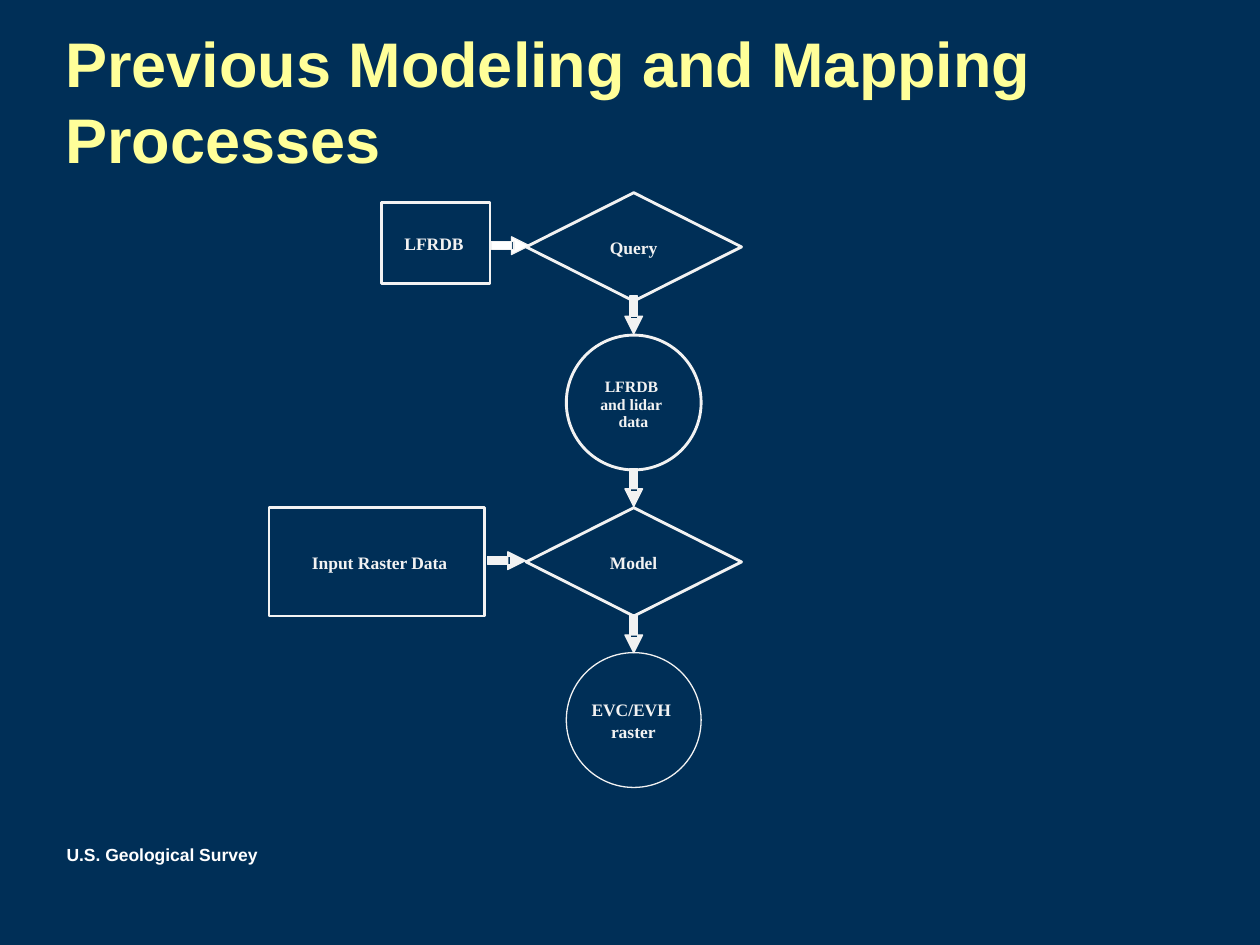
from pptx import Presentation
from pptx.dml.color import RGBColor
from pptx.enum.shapes import MSO_SHAPE as Kind
from pptx.enum.text import MSO_ANCHOR as Anchor, MSO_AUTO_SIZE as Fit
from pptx.util import Inches, Pt

PALE = "F2F2F2"
MID = 5.03              # centre line of the main flow
WIDE, HIGH = 1.71, 0.86  # decision and raster boxes
DISC = 1.07

deck = Presentation()
deck.slide_width, deck.slide_height = Inches(10), Inches(7.5)
slide = deck.slides.add_slide(deck.slide_layouts[6])
shapes = slide.shapes
tint = RGBColor.from_string
slide.background.fill.solid()
slide.background.fill.fore_color.rgb = tint("002F57")


def write(text, area, size, face="Times New Roman", hue=PALE, pad=(0, 0),
          wrap=False, anchor=Anchor.TOP):
    box = shapes.add_textbox(*map(Inches, area))
    frame = box.text_frame
    side, edge = map(Inches, pad)
    form = {"margin_left": side, "margin_right": side, "margin_top": edge,
            "margin_bottom": edge, "word_wrap": wrap,
            "vertical_anchor": anchor,
            "auto_size": Fit.NONE if wrap else Fit.SHAPE_TO_FIT_TEXT}
    for key, value in form.items():
        setattr(frame, key, value)
    run = frame.paragraphs[0].add_run()
    run.text = text
    for key, value in {"name": face, "size": Pt(size), "bold": True}.items():
        setattr(run.font, key, value)
    run.font.color.rgb = tint(hue)


def trim(shape, weight, fill=None):
    shape.shadow.inherit = False
    shape.line.color.rgb = tint(PALE)
    shape.line.width = Pt(weight)
    if fill:
        shape.fill.solid()
        shape.fill.fore_color.rgb = tint(fill)
    else:
        shape.fill.background()


# Title and footer
write("Previous Modeling and Mapping Processes", (0.42, 0.17, 9.08, 1.25), 36,
      "Arial", "FFFF99", (0.1, 0.05), True, Anchor.MIDDLE)
write("U.S. Geological Survey", (0.43, 6.65, 1.72, 0.27), 10,
      "Arial", "FFFFFF", (0.1, 0.05))

# Flow nodes: kind, centre, top, width, height, line weight
nodes = [
    (Kind.RECTANGLE, 3.46, 1.61, 0.86, 0.64, 1.63),
    (Kind.DIAMOND, MID, 1.53, WIDE, HIGH, 1.63),
    (Kind.OVAL, MID, 2.66, DISC, DISC, 1.63),
    (Kind.DIAMOND, MID, 4.03, WIDE, HIGH, 1.63),
    (Kind.RECTANGLE, 2.99, 4.03, WIDE, HIGH, 1.63),
    (Kind.OVAL, MID, 5.18, DISC, DISC, 0),
]
for kind, mid, top, wide, high, weight in nodes:
    area = (mid - wide / 2, top, wide, high)
    trim(shapes.add_shape(kind, *map(Inches, area)), weight)

# Labels: text lines, centre, top, line step, widths, size
labels = [
    (["LFRDB"], 3.45, 1.85, 0.17, [0.48], 10),
    (["Query"], MID, 1.88, 0.17, [0.38], 10),
    (["LFRDB", "and lidar", "data"], MID, 2.99, 0.14, [0.46, 0.53, 0.24], 9),
    (["Model"], MID, 4.38, 0.17, [0.38], 10),
    (["Input Raster Data"], 3.02, 4.38, 0.17, [1.09], 10),
    (["EVC/EVH", "raster"], MID, 5.55, 0.17, [0.67, 0.36], 10),
]
for lines, mid, top, step, widths, size in labels:
    for row, (line, wide) in enumerate(zip(lines, widths)):
        area = (mid - wide / 2, top + row * step, wide, size / 60)
        write(line, area, size)

# Block arrows, in hundredths of an inch: (along, across) from the tail
shaft = [(0, 2.5), (18, 2.5), (18, -2.5), (0, -2.5)]
head = [(16, 7), (30, 0), (16, -7)]
arrows = [
    (503, 235, True, PALE), (503, 372, True, PALE), (503, 488, True, PALE),
    (387, 445, False, PALE), (390, 195, False, "FFFFFF"),
]
for x, y, down, hue in arrows:
    bar, tip = [[(x + b, y + a) if down else (x + a, y + b) for a, b in part]
                for part in (shaft, head)]
    pen = shapes.build_freeform(*bar[0], scale=Inches(0.01))
    pen.add_line_segments(bar[1:], close=True)
    pen.move_to(*tip[0])
    pen.add_line_segments(tip[1:], close=True)
    trim(pen.convert_to_shape(), 0, hue)

deck.save("out.pptx")
